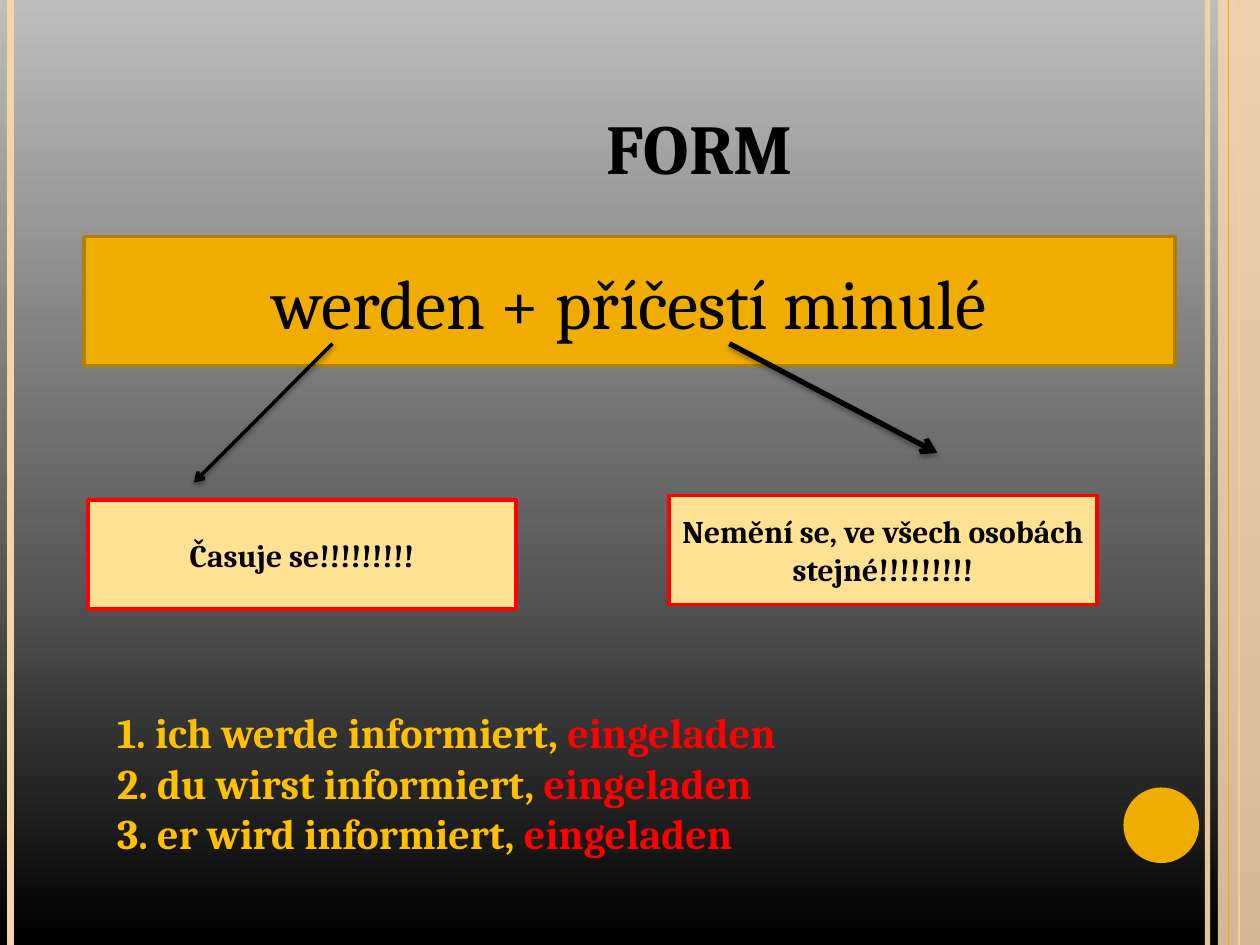
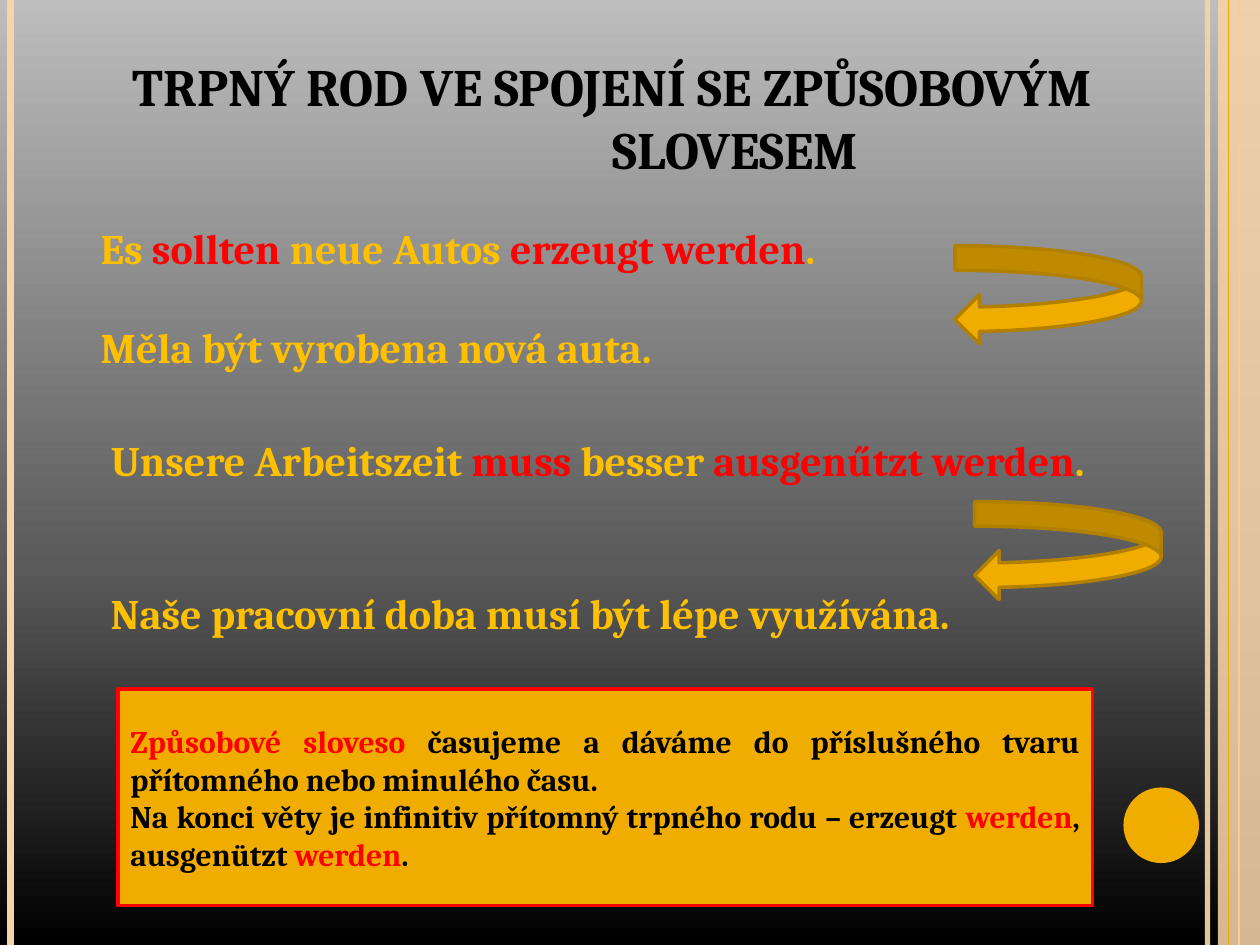
from copy import deepcopy
from pptx import Presentation
from pptx.dml.color import RGBColor as RGB
from pptx.enum.shapes import MSO_CONNECTOR as Conn, MSO_SHAPE as Kind
from pptx.enum.text import MSO_ANCHOR as Anchor, MSO_AUTO_SIZE as Auto, PP_ALIGN as Align
from pptx.oxml.ns import qn
from pptx.oxml.xmlchemy import OxmlElement as Node
from pptx.util import Pt

HEX = {
    "ink": "000000", "gold": "F0AD00", "rim": "B28000", "peach": "F6D3AB",
    "cream": "FFE193", "red": "FF0000", "amber": "FFC000",
    "gray": "5A5A5A", "pale": "BDBDBD",
}
FONT = "Cambria"
WIDE, HIGH = 720, 540


def tint(name):
    return RGB.from_string(HEX[name])


def fade(part, alpha):
    node = Node("a:alpha")
    node.set("val", str(alpha * 1000))
    next(part.iter(qn("a:srgbClr"))).append(node)


class Deck:
    def __init__(self):
        self.prs = Presentation()
        self.prs.slide_width, self.prs.slide_height = Pt(WIDE), Pt(HIGH)
        self.slide = None

    def paint(self):
        master = self.prs.slide_master
        fill = master.background.fill
        fill.gradient()
        fill.gradient_angle = 90
        stops = master.element.find(".//" + qn("a:gsLst"))
        stops.insert(1, deepcopy(stops[0]))
        for stop, name, spot in zip(fill.gradient_stops, ("ink", "gray", "pale"), (0, 0.4, 1)):
            stop.color.rgb = tint(name)
            stop.position = spot

    def frame(self):
        parts = [self.line((x, 0), (x, HIGH), name, width) for x, name, width in (
            (690, "peach", 3), (6, "peach", 4.5), (708, "gold", 1.5))]
        fade(parts[0]._element, 93)
        strip = self.shape(Kind.RECTANGLE, (696, 0, 24, HIGH), "peach")
        fade(strip._element, 87)
        parts += [strip, self.line((702, 0), (702, HIGH), "gold", 0.75),
                  self.shape(Kind.OVAL, (642, 450, 43.2, 43.2), "gold")]
        for part in parts:
            self.prs.slide_master.shapes._spTree.append(part._element)

    def page(self):
        self.slide = self.prs.slides.add_slide(self.prs.slide_layouts[5])

    def words(self, frame, rows, size, bold=True, align=Align.LEFT):
        frame.word_wrap = True
        for i, row in enumerate(rows):
            para = frame.add_paragraph() if i else frame.paragraphs[0]
            para.alignment = align
            for words, name in row:
                run = para.add_run()
                run.text = words
                font = run.font
                font.name, font.size, font.bold = FONT, Pt(size), bold
                font.color.rgb = tint(name)

    def title(self, box, lines, size):
        head = self.slide.shapes.title
        head.left, head.top, head.width, head.height = map(Pt, box)
        frame = head.text_frame
        frame.auto_size = Auto.NONE
        frame.vertical_anchor = Anchor.BOTTOM
        self.words(frame, [[(line, "ink")] for line in lines], size, align=Align.CENTER)
        last = frame.paragraphs[-1]._p.get_or_add_pPr()
        last.set("marL", str(Pt(140)))

    def text(self, box, rows):
        note = self.slide.shapes.add_textbox(*map(Pt, box))
        self.words(note.text_frame, rows, 24)

    def shape(self, kind, box, fill, edge=None):
        item = self.slide.shapes.add_shape(kind, *map(Pt, box))
        item.shadow.inherit = False
        item.fill.solid()
        item.fill.fore_color.rgb = tint(fill)
        if edge:
            item.line.color.rgb = tint(edge)
            item.line.width = Pt(2)
        else:
            item.line.fill.background()
        return item

    def panel(self, box, fill, edge, rows, size=18, bold=True, align=Align.CENTER):
        frame = self.shape(Kind.RECTANGLE, box, fill, edge).text_frame
        frame.vertical_anchor = Anchor.MIDDLE
        self.words(frame, rows, size, bold, align)

    def line(self, start, end, name, width):
        item = self.slide.shapes.add_connector(Conn.STRAIGHT, *map(Pt, start + end))
        item.line.color.rgb = tint(name)
        item.line.width = Pt(width)
        item._element.spPr.append(Node("a:effectLst"))
        return item

    def arrow(self, start, end, width, alpha, drop):
        item = self.line(start, end, "ink", width)
        tip = Node("a:tailEnd")
        tip.set("type", "arrow")
        item._element.spPr.find(qn("a:ln")).append(tip)
        shade = Node("a:outerShdw")
        for key, value in (("blurRad", Pt(3.1)), ("dist", Pt(drop)),
                           ("dir", 5400000), ("rotWithShape", 0)):
            shade.set(key, str(value))
        color = Node("a:srgbClr")
        color.set("val", HEX["ink"])
        shade.append(color)
        fade(shade, alpha)
        item._element.spPr.find(qn("a:effectLst")).append(shade)


def form(deck):
    deck.title((36, 21.6, 588, 90), ["FORM"], 40)
    deck.panel((48, 135.3, 623.6, 73.7), "gold", "rim",
               [[("werden + příčestí minulé", "ink")]], 40, False)
    deck.arrow((190, 196.4), (110.8, 275.8), 2, 38, 1.6)
    deck.arrow((416.8, 196.4), (535.6, 258.8), 3, 35, 1.8)
    for left, top, words in ((50.4, 285.6, "Časuje se!!!!!!!!!"),
                             (382.4, 283, "Nemění se, ve všech osobách stejné!!!!!!!!!")):
        deck.panel((left, top, 244.4, 62.4), "cream", "red", [[(words, "ink")]])
    deck.text((59.8, 400.3, 566.6, 94.5), [
        [(f"{i}. {verb} informiert, ", "amber"), ("eingeladen", "red")]
        for i, verb in enumerate(("ich werde", "du wirst", "er wird"), 1)])


def modal(deck):
    deck.title((56.2, 16.6, 588, 90),
               ["TRPNÝ ROD VE SPOJENÍ SE ZPŮSOBOVÝM", "SLOVESEM"], 30)
    deck.text((50.4, 123.8, 494.6, 36), [[
        ("Es ", "amber"), ("sollten", "red"), (" neue Autos ", "amber"),
        ("erzeugt werden", "red"), (".", "amber")]])
    deck.text((50.4, 180, 495.4, 36), [[("Měla být vyrobena nová auta.", "amber")]])
    deck.text((56.2, 244.8, 613.4, 65.5), [[
        ("Unsere Arbeitszeit ", "amber"), ("muss ", "red"), ("besser ", "amber"),
        ("ausgenűtzt werden", "red"), (".", "amber")]])
    deck.text((56.2, 331.9, 581, 36),
              [[("Naše pracovní doba musí být lépe využívána.", "amber")]])
    for left, top in ((545.6, 140.4), (556.9, 286.6)):
        deck.shape(Kind.CURVED_LEFT_ARROW, (left, top, 106.6, 56.2), "gold", "rim")
    deck.panel((67.4, 393.8, 556.8, 123.8), "gold", "red", [
        [("Způsobové sloveso ", "red"),
         ("časujeme a dáváme do příslušného tvaru přítomného nebo minulého času.", "ink")],
        [("Na konci věty je infinitiv přítomný trpného rodu – erzeugt ", "ink"),
         ("werden", "red"), (", ausgenützt ", "ink"), ("werden", "red"), (".", "ink")],
    ], align=Align.JUSTIFY)


def main():
    deck = Deck()
    deck.paint()
    deck.page()
    deck.frame()
    form(deck)
    deck.page()
    modal(deck)
    deck.prs.save("out.pptx")


if __name__ == "__main__":
    main()
